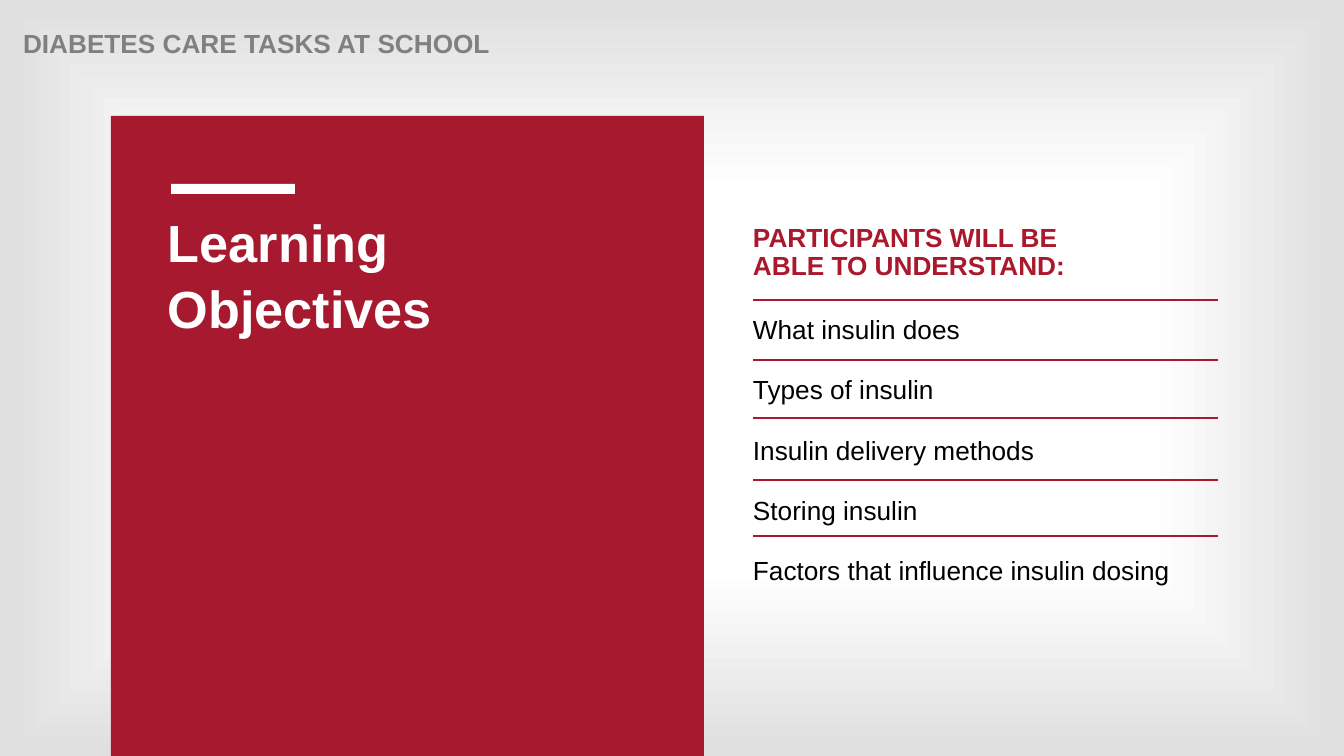
from dataclasses import dataclass

from lxml import etree
from pptx import Presentation
from pptx.dml.color import RGBColor
from pptx.enum.shapes import MSO_CONNECTOR, MSO_SHAPE
from pptx.enum.text import MSO_ANCHOR, MSO_AUTO_SIZE, PP_ALIGN
from pptx.oxml.ns import qn
from pptx.util import Emu, Pt

RECTANGLE = MSO_SHAPE.RECTANGLE
STRAIGHT = MSO_CONNECTOR.STRAIGHT
TOP = MSO_ANCHOR.TOP
LEFT = PP_ALIGN.LEFT
NO_AUTOFIT = MSO_AUTO_SIZE.NONE

EMU_PER_PX = 914400 / 100.8
TWO_CONTENT = 3


@dataclass(frozen=True)
class Theme:
    font: str = "Arial"
    panel: str = "A6192E"
    accent: str = "AA182C"
    label: str = "808080"
    ink: str = "000000"
    white: str = "FFFFFF"
    edge: str = "E0E0E0"
    title_size: float = 37.3
    body_size: float = 18.7
    rule_width: float = 2


THEME = Theme()

OBJECTIVES = [
    "What insulin does",
    "Types of insulin",
    "Insulin delivery methods",
    "Storing insulin",
    "Factors that influence insulin dosing",
]
COLUMN_LEFT, COLUMN_WIDTH = 753, 465
RULE_TOPS = [300, 360, 418, 480, 536]


def px(length):
    return Emu(round(length * EMU_PER_PX))


def place(box, left, top, width, height):
    box.left, box.top = px(left), px(top)
    box.width, box.height = px(width), px(height)


def set_background(page):
    """Fill the page with a gradient that runs from the centre to the edges."""
    page.background.fill.gradient()
    gradient = page.element.find(".//" + qn("a:gradFill"))
    for child in list(gradient):
        gradient.remove(child)
    stops = etree.SubElement(gradient, qn("a:gsLst"))
    for percent, color in [(12, THEME.white), (50, THEME.white), (98, THEME.edge)]:
        stop = etree.SubElement(stops, qn("a:gs"), pos=str(percent * 1000))
        etree.SubElement(stop, qn("a:srgbClr"), val=color)
    shape_path = etree.SubElement(gradient, qn("a:path"), path="shape")
    etree.SubElement(shape_path, qn("a:fillToRect"), l="50000", t="50000", r="50000", b="50000")


def add_block(page, left, top, width, height, color):
    block = page.shapes.add_shape(RECTANGLE, px(left), px(top), px(width), px(height))
    block.shadow.inherit = False
    block.fill.solid()
    block.fill.fore_color.rgb = RGBColor.from_string(color)
    block.line.fill.background()
    return block


def send_to_back(*blocks):
    """Move the blocks, first one lowest, behind the placeholders."""
    for index, block in enumerate(blocks):
        block.element.getparent().insert(2 + index, block.element)


def add_rule(page, top):
    right = COLUMN_LEFT + COLUMN_WIDTH
    rule = page.shapes.add_connector(STRAIGHT, px(COLUMN_LEFT), px(top), px(right), px(top))
    rule.line.color.rgb = RGBColor.from_string(THEME.accent)
    rule.line.width = Pt(THEME.rule_width)
    etree.SubElement(rule.element.spPr, qn("a:effectLst"))


def write(box, paragraphs, *, size, color, bold=False, spacing=0.9,
          before=0, after=0, inset_x=0, inset_y=0):
    """Fill a box with plain left-aligned paragraphs in one format."""
    frame = box.text_frame
    frame.word_wrap = True
    frame.auto_size = NO_AUTOFIT
    frame.vertical_anchor = TOP
    frame.margin_left = frame.margin_right = px(inset_x)
    frame.margin_top = frame.margin_bottom = px(inset_y)
    frame.text = "\n".join(paragraphs)
    for para in frame.paragraphs:
        para.alignment = LEFT
        para.line_spacing = spacing
        para.space_before, para.space_after = Pt(before), Pt(after)
        properties = para._p.get_or_add_pPr()
        properties.set("marL", "0")
        properties.set("indent", "0")
        etree.SubElement(properties, qn("a:buNone"))
        for span in para.runs:
            span.font.name = THEME.font
            span.font.size = Pt(size)
            span.font.bold = bold
            span.font.color.rgb = RGBColor.from_string(color)


def main():
    deck = Presentation()
    deck.slide_width, deck.slide_height = px(1344), px(756)
    page = deck.slides.add_slide(deck.slide_layouts[TWO_CONTENT])
    set_background(page)

    # Red panel with its short white bar
    panel = add_block(page, 111, 116, 593, 640, THEME.panel)
    bar = add_block(page, 171, 184, 124, 10, THEME.white)
    send_to_back(panel, bar)

    # Section label
    label = page.shapes.add_textbox(px(13), px(24), px(1109), px(28))
    write(label, ["DIABETES CARE TASKS AT SCHOOL"], size=THEME.body_size,
          color=THEME.label, bold=True, inset_x=10, inset_y=7)

    # Title, list heading and list
    title, heading, objectives = page.placeholders
    place(title, 158, 202, 491, 197)
    write(title, ["Learning Objectives"], size=THEME.title_size, color=THEME.white,
          bold=True, spacing=1.05, inset_x=10, inset_y=5)

    place(heading, COLUMN_LEFT, 225, COLUMN_WIDTH, 70)
    write(heading, ["PARTICIPANTS WILL BE\vABLE TO UNDERSTAND:"],
          size=THEME.body_size, color=THEME.accent, bold=True, before=1.3)

    place(objectives, COLUMN_LEFT, 317, COLUMN_WIDTH, 297)
    write(objectives, OBJECTIVES, size=THEME.body_size, color=THEME.ink,
          before=1, after=21.8)

    # Rules between the objectives
    for top in RULE_TOPS:
        add_rule(page, top)

    deck.save("out.pptx")


if __name__ == "__main__":
    main()
